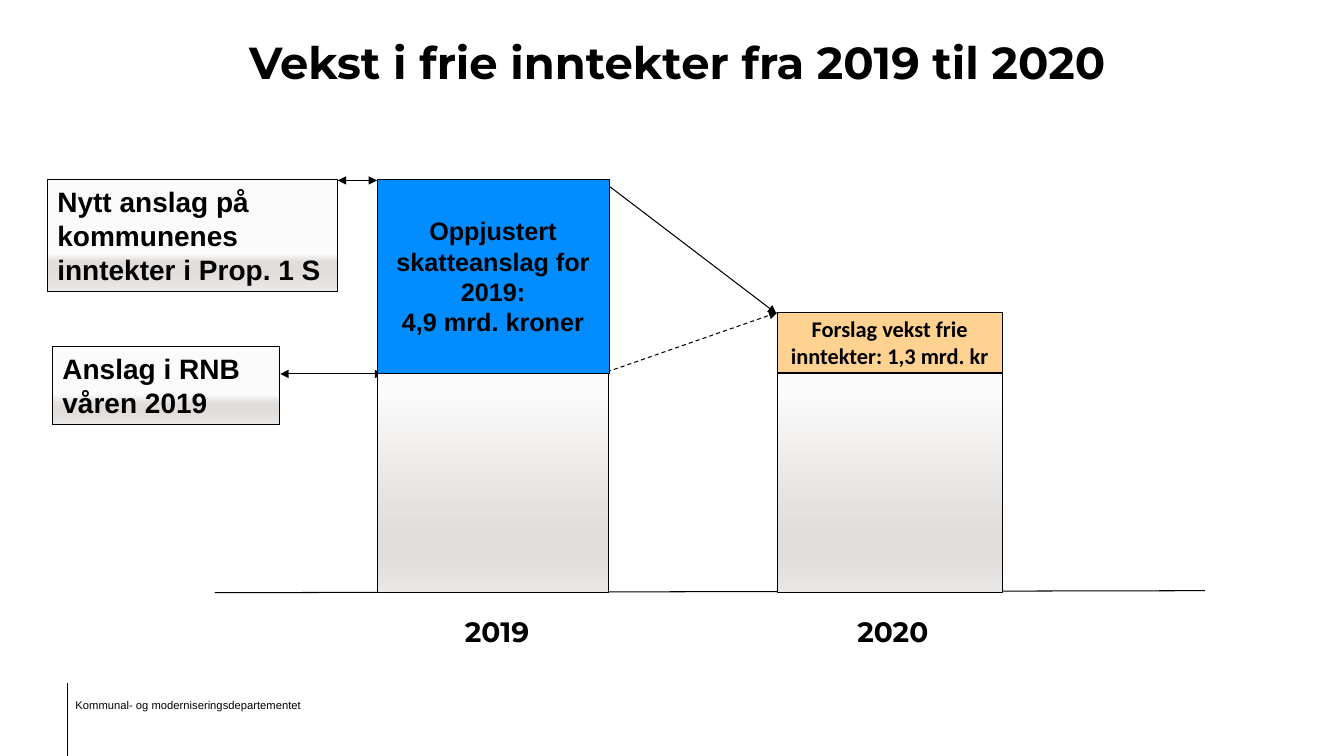
from lxml import etree
from pptx import Presentation
from pptx.dml.color import RGBColor
from pptx.enum.dml import MSO_LINE
from pptx.enum.shapes import MSO_CONNECTOR, MSO_SHAPE
from pptx.enum.text import MSO_ANCHOR, MSO_AUTO_SIZE, PP_ALIGN
from pptx.oxml.ns import qn
from pptx.util import Inches, Pt

RECTANGLE = MSO_SHAPE.RECTANGLE
STRAIGHT = MSO_CONNECTOR.STRAIGHT
DASH = MSO_LINE.DASH
LEFT, CENTER = PP_ALIGN.LEFT, PP_ALIGN.CENTER
MIDDLE = MSO_ANCHOR.MIDDLE
NO_AUTOFIT = MSO_AUTO_SIZE.NONE

BLACK = RGBColor(0x00, 0x00, 0x00)
BLUE = RGBColor(0x01, 0x8D, 0xFF)
ORANGE = RGBColor(0xFF, 0xD2, 0x92)
LIGHT_GRAY = RGBColor(0xFB, 0xFB, 0xFB)
MID_GRAY = RGBColor(0xE0, 0xDD, 0xDB)
PALE_GRAY = RGBColor(0xEA, 0xE8, 0xE7)

BAR_2019_LEFT, BAR_2020_LEFT = 3.74, 7.71
BAR_TOP, BAR_HEIGHT = 3.7, 2.18
ESTIMATE_TOP = 1.78


def write_text(shape, lines, size, font_name, bold=True, align=CENTER):
    text_frame = shape.text_frame
    text_frame.word_wrap = True
    text_frame.auto_size = NO_AUTOFIT
    text_frame.vertical_anchor = MIDDLE
    text_frame.text = "\n".join(lines)
    for paragraph in text_frame.paragraphs:
        paragraph.alignment = align
        for run in paragraph.runs:
            run.font.name = font_name
            run.font.size = Pt(size)
            run.font.bold = bold
            run.font.color.rgb = BLACK


def place(shape, left, top, width, height):
    shape.left, shape.top = Inches(left), Inches(top)
    shape.width, shape.height = Inches(width), Inches(height)


def add_text(slide, box, text, size, font_name, bold=True, align=CENTER):
    shape = slide.shapes.add_textbox(*map(Inches, box))
    write_text(shape, [text], size, font_name, bold, align)
    return shape


def add_box(slide, box, line_width):
    shape = slide.shapes.add_shape(RECTANGLE, *map(Inches, box))
    shape.shadow.inherit = False
    shape.line.color.rgb = BLACK
    shape.line.width = Pt(line_width)
    return shape


def add_solid_box(slide, box, line_width, color, lines, size, font_name):
    shape = add_box(slide, box, line_width)
    shape.fill.solid()
    shape.fill.fore_color.rgb = color
    write_text(shape, lines, size, font_name)


def add_gray_box(slide, box, line_width, first_stop):
    """Add a box shaded downwards, light until first_stop percent."""
    shape = add_box(slide, box, line_width)
    shape.fill.gradient()
    shape.fill.gradient_angle = 270
    stop_list = shape.element.spPr.find(qn("a:gradFill")).find(qn("a:gsLst"))
    for stop in list(stop_list):
        stop_list.remove(stop)
    stops = [(first_stop, LIGHT_GRAY), (74, MID_GRAY), (83, MID_GRAY), (100, PALE_GRAY)]
    for percent, color in stops:
        stop = etree.SubElement(stop_list, qn("a:gs"), pos=str(percent * 1000))
        etree.SubElement(stop, qn("a:srgbClr"), val=str(color))
    return shape


def add_line(slide, start, end, dash=None, arrows=()):
    """Add a line; arrows may hold headEnd (start) and tailEnd (end)."""
    line = slide.shapes.add_connector(STRAIGHT, *map(Inches, start + end))
    line.line.color.rgb = BLACK
    line.line.width = Pt(0.75)
    if dash:
        line.line.dash_style = dash
    properties = line.element.spPr
    outline = properties.find(qn("a:ln"))
    for arrow in arrows:
        etree.SubElement(outline, qn(f"a:{arrow}"), type="triangle")
    etree.SubElement(properties, qn("a:effectLst"))


def add_footer(slide):
    footer = add_text(slide, (0.65, 6.89, 2.83, 0.22),
                      "Kommunal- og moderniseringsdepartementet",
                      8, "Arial", bold=False, align=LEFT)
    footer.text_frame.paragraphs[0].line_spacing = 0.9
    add_line(slide, (0.67, 6.78), (0.67, 7.5))


def add_estimate_labels(slide):
    labels = [
        ((0.47, ESTIMATE_TOP, 2.88, 1.11), 66,
         "Nytt anslag på kommunenes inntekter i Prop. 1 S"),
        ((0.52, 3.44, 2.25, 0.77), 61, "Anslag i RNB våren 2019"),
    ]
    for box, first_stop, text in labels:
        label = add_gray_box(slide, box, 1, first_stop)
        write_text(label, [text], 20, "Arial", align=LEFT)


def add_arrows(slide):
    both_ends = ("headEnd", "tailEnd")
    add_line(slide, (3.74, 1.79), (3.35, 1.79), arrows=both_ends)
    add_line(slide, (3.8, 3.71), (2.78, 3.71), arrows=both_ends)
    add_line(slide, (6.02, 3.69), (7.71, 3.1), DASH, ("tailEnd",))
    add_line(slide, (6.02, 1.83), (7.7, 3.11), arrows=("tailEnd",))


def main():
    presentation = Presentation()
    presentation.slide_width = Inches(13.33)
    presentation.slide_height = Inches(7.5)
    slide = presentation.slides.add_slide(presentation.slide_layouts[5])

    title = slide.shapes.title
    place(title, 0.81, 0.29, 11.82, 0.64)
    write_text(title, ["Vekst i frie inntekter fra 2019 til 2020"], 32, "Montserrat")

    add_footer(slide)
    add_solid_box(slide, (BAR_2020_LEFT, 3.1, 2.23, 0.59), 0.5, ORANGE,
                  ["Forslag vekst frie inntekter: 1,3 mrd. kr"], 16, "Calibri")
    add_line(slide, (2.13, 5.88), (11.95, 5.86))
    for left, width, year in [(4.3, 1.26, "2019"), (8.24, 1.23, "2020")]:
        add_text(slide, (left, 6.04, width, 0.44), year, 20, "Montserrat")
    add_estimate_labels(slide)
    add_arrows(slide)
    add_solid_box(slide, (BAR_2019_LEFT, ESTIMATE_TOP, 2.3, 1.92), 0.25, BLUE,
                  ["Oppjustert skatteanslag for 2019:", "4,9 mrd. kroner"], 18, "Arial")
    for left, width in [(BAR_2019_LEFT, 2.29), (BAR_2020_LEFT, 2.23)]:
        add_gray_box(slide, (left, BAR_TOP, width, BAR_HEIGHT), 0.5, 7)

    presentation.save("out.pptx")


if __name__ == "__main__":
    main()
